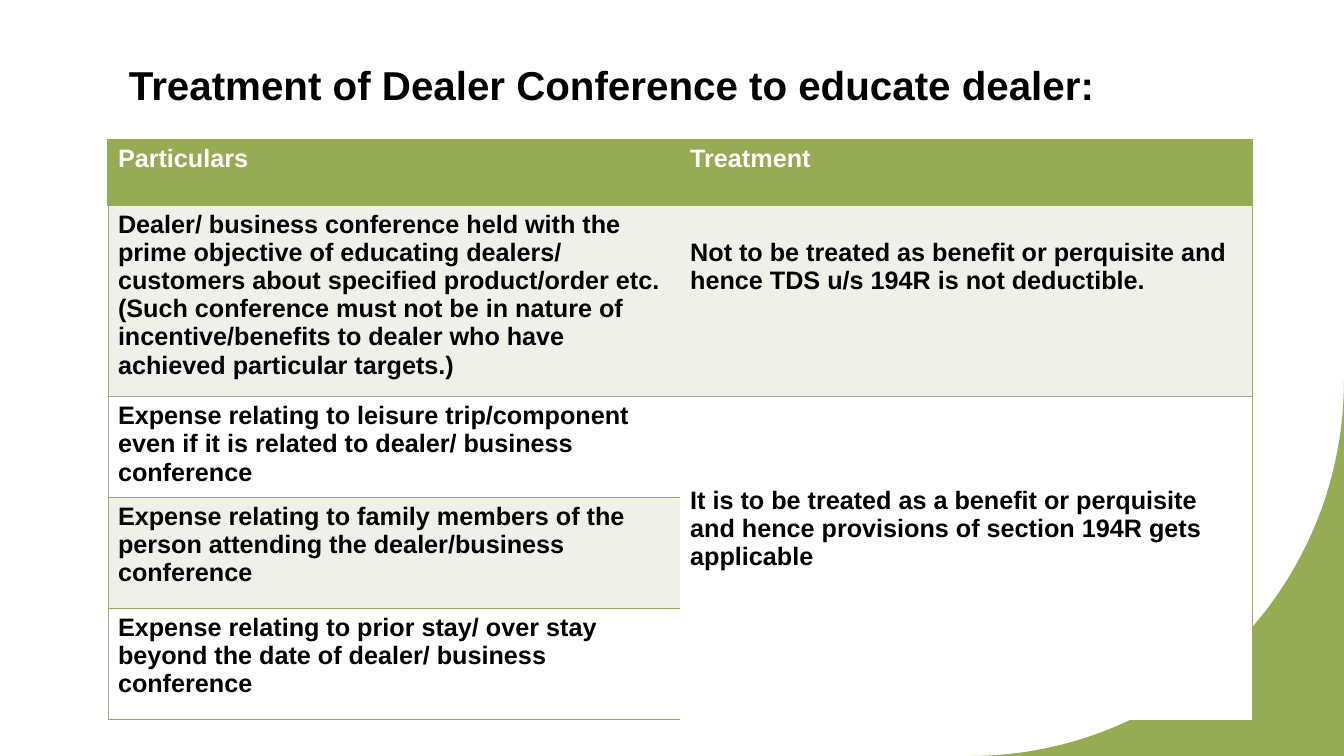
from dataclasses import dataclass
from math import cos, pi, sin

from lxml.etree import SubElement
from pptx import Presentation
from pptx.dml.color import RGBColor
from pptx.enum.text import MSO_ANCHOR
from pptx.oxml.ns import qn
from pptx.slide import Slide
from pptx.table import Table, _Cell
from pptx.text.text import _Paragraph
from pptx.util import Cm, Pt

COLORS = {"green": "95AB54", "pale": "EFF1E9", "white": "FFFFFF",
          "black": "000000", "grey": "A0A59A"}
FONT = "Arial"
WIDE, HIGH = 33.87, 19.05


@dataclass(frozen=True)
class Edge:
    color: str
    width: float


BOLD = Edge("green", 1)
THIN = Edge("grey", 0.5)


@dataclass(frozen=True)
class Row:
    height: float
    left: str
    right: str
    fill: str
    ink: str = "black"
    top: float = 0.13
    side: Edge = THIN
    base: Edge = BOLD


ROWS = [
    Row(1.66, "Particulars", "Treatment", "green", "white", side=BOLD),
    Row(4.55, "Dealer/ business conference held with the prime objective of "
        "educating dealers/ customers about specified product/order etc. "
        "(Such conference must not be in nature of incentive/benefits to "
        "dealer who have achieved particular targets.)",
        "Not to be treated as benefit or perquisite and hence TDS u/s 194R "
        "is not deductible.", "pale", top=0.84, base=THIN),
    Row(2.37, "Expense relating to leisure trip/component even if it is "
        "related to dealer/ business conference",
        "It is to be treated as a benefit or perquisite and hence provisions "
        "of section 194R gets applicable", "white", top=2.26),
    Row(2.8, "Expense relating to family members of the person attending "
        "the dealer/business conference", "", "pale"),
    Row(2.8, "Expense relating to prior stay/ over stay beyond the date of "
        "dealer/ business conference", "", "white"),
]
SPAN = 2


def rgb(name: str) -> RGBColor:
    return RGBColor.from_string(COLORS[name])


def write(para: _Paragraph, text: str, size: float, ink: str) -> None:
    run = para.add_run()
    run.text = text
    run.font.name = FONT
    run.font.size = Pt(size)
    run.font.bold = True
    run.font.color.rgb = rgb(ink)


def border(cell: _Cell, edges: dict[str, Edge | None]) -> None:
    props = cell._tc.get_or_add_tcPr()
    for spot, (side, edge) in enumerate(edges.items()):
        line = SubElement(props, qn(f"a:ln{side}"))
        props.remove(line)
        props.insert(spot, line)
        if edge is None:
            SubElement(line, qn("a:noFill"))
            continue
        line.set("w", str(Pt(edge.width)))
        fill = SubElement(line, qn("a:solidFill"))
        SubElement(fill, qn("a:srgbClr")).set("val", COLORS[edge.color])


def corner(slide: Slide) -> None:
    x, y = 24.46, 9.6
    steps = 90
    arc = [(Cm(x + (WIDE - x) * cos(i * pi / 2 / steps)),
            Cm(y + (HIGH - y) * sin(i * pi / 2 / steps)))
           for i in range(steps + 1)]
    path = slide.shapes.build_freeform(*arc[0])
    path.add_line_segments(arc[1:] + [(Cm(WIDE), Cm(HIGH))], close=True)
    shape = path.convert_to_shape()
    shape.shadow.inherit = False
    shape.fill.solid()
    shape.fill.fore_color.rgb = rgb("green")
    shape.line.fill.background()


def title(slide: Slide) -> None:
    box = slide.shapes.add_textbox(Cm(3), Cm(0.36), Cm(27.64), Cm(2.49))
    frame = box.text_frame
    frame.word_wrap = True
    frame.vertical_anchor = MSO_ANCHOR.BOTTOM
    para = frame.paragraphs[0]
    para.line_spacing = 1.1
    write(para, "Treatment of Dealer Conference to educate dealer:", 28.8, "black")


def fill_row(table: Table, index: int, row: Row) -> None:
    table.rows[index].height = Cm(row.height)
    above = ROWS[index - 1].base if index else BOLD
    last = index == len(ROWS) - 1
    for col, text in enumerate((row.left, row.right)):
        cell = table.cell(index, col)
        cell.fill.solid()
        cell.fill.fore_color.rgb = rgb("white" if col and index > SPAN else row.fill)
        inner = col == 1 and index >= SPAN
        border(cell, {
            "L": None if col else row.side,
            "R": BOLD if col else None,
            "T": None if inner and index > SPAN else above,
            "B": None if inner and not last else row.base,
        })
        if text:
            write(cell.text_frame.paragraphs[0], text, 18, row.ink)
        if col:
            cell.margin_top = Cm(row.top)


def grid(slide: Slide) -> None:
    table = slide.shapes.add_table(
        len(ROWS), 2, Cm(2.72), Cm(3.51), Cm(28.84),
        Cm(sum(row.height for row in ROWS))).table
    for index, row in enumerate(ROWS):
        fill_row(table, index, row)
    table.cell(SPAN, 1).merge(table.cell(len(ROWS) - 1, 1))


def main() -> None:
    deck = Presentation()
    deck.slide_width, deck.slide_height = Cm(WIDE), Cm(HIGH)
    slide = deck.slides.add_slide(deck.slide_layouts[6])
    corner(slide)
    title(slide)
    grid(slide)
    deck.save("out.pptx")


if __name__ == "__main__":
    main()
